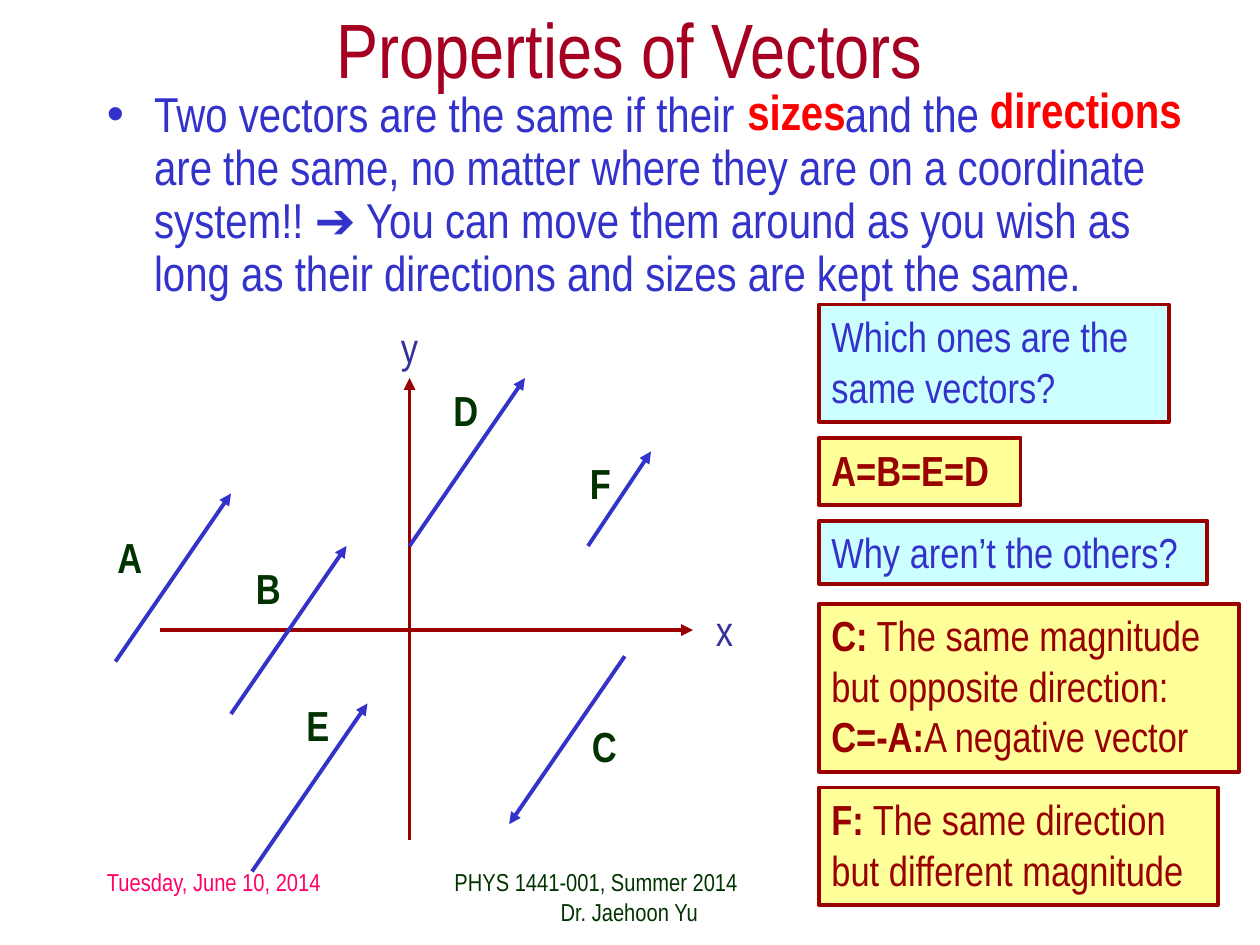
"""Build the "Properties of Vectors" slide on a grid of 120 columns by 90 rows."""
from lxml import etree
from pptx import Presentation, util as u
from pptx.dml.color import RGBColor
from pptx.enum import shapes, text
from pptx.oxml.ns import qn

COLORS = {
    "title": "A50021", "blue": "3333CC", "axis": "990000", "axis_label": "333399",
    "green": "003300", "pink": "FF0066", "red": "FF0000",
    "question": "CCFFFF", "answer": "FFFF99",
}
CELL = u.Inches(10) / 120


def write(sp, runs, size=24, color="blue", bold=False, align="LEFT", anchor="TOP",
          wrap=True, left=0, hanging=0, bullet=None, tab=None, spacing=None):
    tf = sp.text_frame
    tf.word_wrap = wrap
    tf.vertical_anchor = getattr(text.MSO_ANCHOR, anchor)
    p = tf.paragraphs[0]
    p.alignment = getattr(text.PP_ALIGN, align)
    if spacing:
        p.line_spacing = spacing
    pPr = p._p.get_or_add_pPr()
    if left:
        pPr.set("marL", str(int(left * CELL)))
        pPr.set("indent", str(int(-hanging * CELL)))
    if bullet:
        etree.SubElement(pPr, qn("a:buFont"), typeface="Arial")
        etree.SubElement(pPr, qn("a:buChar"), char=bullet)
    if tab:
        tabs = etree.SubElement(pPr, qn("a:tabLst"))
        etree.SubElement(tabs, qn("a:tab"), pos=str(int(tab * CELL)), algn="l")
    for i, part in enumerate([runs] if isinstance(runs, str) else runs):
        for j, line in enumerate(part.split("\v")):
            if j:
                p.add_line_break()
            r = p.add_run()
            r.text = line
            r.font.name = "Arial Narrow"
            r.font.size = u.Pt(size)
            r.font.bold = bold if isinstance(runs, str) else i % 2 == 0
            r.font.color.rgb = RGBColor.from_string(COLORS[color])


def arrow(x1, y1, x2, y2, color):
    ends = [int(v * CELL) for v in (x1, y1, x2, y2)]
    c = s.shapes.add_connector(shapes.MSO_CONNECTOR.STRAIGHT, *ends)
    c.line.color.rgb = RGBColor.from_string(COLORS[color])
    c.line.width = u.Pt(2.25)
    etree.SubElement(c.line._get_or_add_ln(), qn("a:tailEnd"), type="triangle")
    etree.SubElement(c._element.spPr, qn("a:effectLst"))


prs = Presentation()
prs.slide_width, prs.slide_height = u.Inches(10), u.Inches(7.5)
s = prs.slides.add_slide(prs.slide_layouts[6])

body = ("Two vectors are the same if their\tand the\vare the same, no matter where they "
        "are on a coordinate system!! ➔ You can move them around as you wish as long as "
        "their directions and sizes are kept the same.")
texts = [
    (9, 82, 25, 6, "Tuesday, June 10, 2014", dict(size=14, color="pink")),
    (41, 82, 38, 6, "PHYS 1441-001, Summer 2014\vDr. Jaehoon Yu",
     dict(size=14, color="green", left=11.2, hanging=10.1)),
    (9, 0, 102, 9, "Properties of Vectors",
     dict(size=44, color="title", align="CENTER", anchor="MIDDLE")),
    (9, 8, 102, 17, body,
     dict(size=28, left=4.5, hanging=4.5, bullet="•", tab=70.3, spacing=0.9)),
    (70, 7.2, 13, 6.8, "sizes", dict(size=28, color="red", bold=True)),
    (93.1, 7, 21.8, 6.8, "directions", dict(size=28, color="red", bold=True)),
    (67, 57, 4, 6, "x", dict(color="axis_label", wrap=False)),
    (37, 30, 4, 6, "y", dict(color="axis_label", wrap=False)),
]
for x, y, w, h, words, fmt in texts:
    sp = s.shapes.add_textbox(*[int(v * CELL) for v in (x, y, w, h)])
    write(sp, words, **fmt)

arrow(15.25, 60, 66, 60, "axis")
arrow(39, 80, 39, 36, "axis")

vectors = [
    ("A", 11, 63, 11, -16, 10, 50),
    ("B", 22, 68, 11, -16, 23.2, 53),
    ("E", 24, 83, 11, -16, 28, 66),
    ("D", 39, 52, 11, -16, 42, 36),
    ("C", 59.5, 62.5, -11, 16, 55.2, 68),
    ("F", 56, 52, 6, -9, 55, 43),
]
for name, x, y, dx, dy, label_x, label_y in vectors:
    arrow(x, y, x + dx, y + dy, "blue")
    sp = s.shapes.add_textbox(*[int(v * CELL) for v in (label_x, label_y, 4.8, 6)])
    write(sp, name, color="green", bold=True, wrap=False)

boxes = [
    (29, 33.3, 11.2, "question", ["", "Which ones are the same vectors?"]),
    (41.7, 19.2, 6.4, "answer", ["A=B=E=D"]),
    (49.6, 37, 6, "question", ["", "Why aren’t the others?"]),
    (57.5, 40, 16, "answer",
     ["C:", " The same magnitude but opposite direction: ", "C=-A:", "A negative vector"]),
    (75, 38, 11.2, "answer", ["F:", " The same direction but different magnitude"]),
]
for y, w, h, kind, runs in boxes:
    sp = s.shapes.add_shape(shapes.MSO_SHAPE.RECTANGLE, *[int(v * CELL) for v in (78, y, w, h)])
    sp.shadow.inherit = False
    sp.fill.solid()
    sp.fill.fore_color.rgb = RGBColor.from_string(COLORS[kind])
    sp.line.color.rgb = RGBColor.from_string(COLORS["axis"])
    sp.line.width = u.Pt(2.25)
    write(sp, runs, color="blue" if kind == "question" else "axis")

prs.save("out.pptx")
